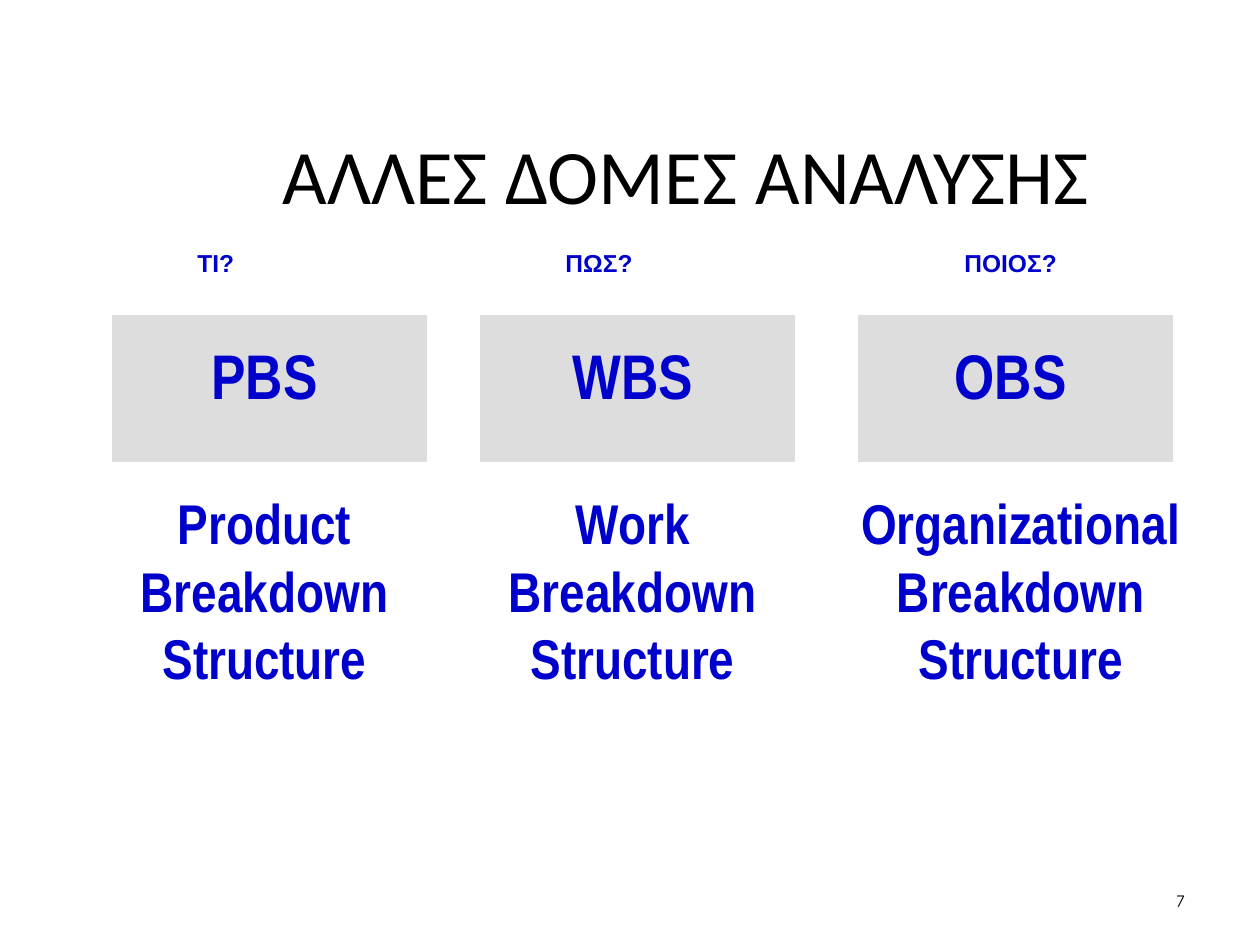
"""Build a slide comparing the PBS, WBS and OBS breakdown structures."""
from pptx import Presentation
from pptx.dml.color import RGBColor
from pptx.enum import shapes, text
from pptx.util import Cm, Pt

BLUE = RGBColor(0x00, 0x00, 0xCC)
GREY = RGBColor(0xDD, 0xDD, 0xDD)
BLACK = RGBColor(0x00, 0x00, 0x00)
LEFT, CENTER, RIGHT = text.PP_ALIGN.LEFT, text.PP_ALIGN.CENTER, text.PP_ALIGN.RIGHT


def write(shape, words, size, font, color=BLUE, bold=True, align=CENTER, anchor=text.MSO_ANCHOR.TOP):
    frame = shape.text_frame
    frame.word_wrap = True
    frame.vertical_anchor = anchor
    paragraph = frame.paragraphs[0]
    paragraph.alignment = align
    run = paragraph.add_run()
    run.text = words
    run.font.size = Pt(size)
    run.font.name = font
    run.font.bold = bold
    run.font.color.rgb = color


def add_grey(kind, left, top, width, height):
    shape = slide.shapes.add_shape(kind, Cm(left), Cm(top), Cm(width), Cm(height))
    shape.shadow.inherit = False
    shape.fill.solid()
    shape.fill.fore_color.rgb = GREY
    shape.line.fill.background()
    return shape


presentation = Presentation()
presentation.slide_width, presentation.slide_height = Cm(25.4), Cm(19.05)
slide = presentation.slides.add_slide(presentation.slide_layouts[5])

title = slide.shapes.title
title.left, title.top, title.width, title.height = Cm(2.26), Cm(2.06), Cm(23.14), Cm(2.87)
write(title, "ΆΛΛΕΣ ΔΟΜΕΣ ΑΝΑΛΥΣΗΣ", 44, "Calibri", BLACK, False, anchor=text.MSO_ANCHOR.MIDDLE)

columns = [
    (2.26, "PBS", "Product Breakdown Structure", 2.26, 6.15, "ΤΙ?", 3.73, LEFT),
    (9.68, "WBS", "Work Breakdown Structure", 9.68, 6.15, "ΠΩΣ?", 11.15, LEFT),
    (17.3, "OBS", "Organizational Breakdown Structure", 16.87, 7.42, "ΠΟΙΟΣ?", 18.57, CENTER),
]
for left, short, name, name_left, name_width, question, question_left, align in columns:
    add_grey(shapes.MSO_SHAPE.ACTION_BUTTON_CUSTOM, left, 6.35, 6.35, 2.97)
    label = add_grey(shapes.MSO_SHAPE.RECTANGLE, left, 6.65, 6.15, 1.78)
    write(label, short, 36, "Arial Narrow")

    name_box = slide.shapes.add_textbox(Cm(name_left), Cm(9.73), Cm(name_width), Cm(4.32))
    write(name_box, name, 32, "Arial Narrow")

    question_box = slide.shapes.add_textbox(Cm(question_left), Cm(4.88), Cm(3.61), Cm(0.86))
    write(question_box, question, 14, "Arial", align=align)

number = slide.shapes.add_textbox(Cm(18.21), Cm(17.65), Cm(5.92), Cm(1.02))
write(number, "7", 10, "Comic Neue", BLACK, False, RIGHT, text.MSO_ANCHOR.MIDDLE)

presentation.save("out.pptx")
